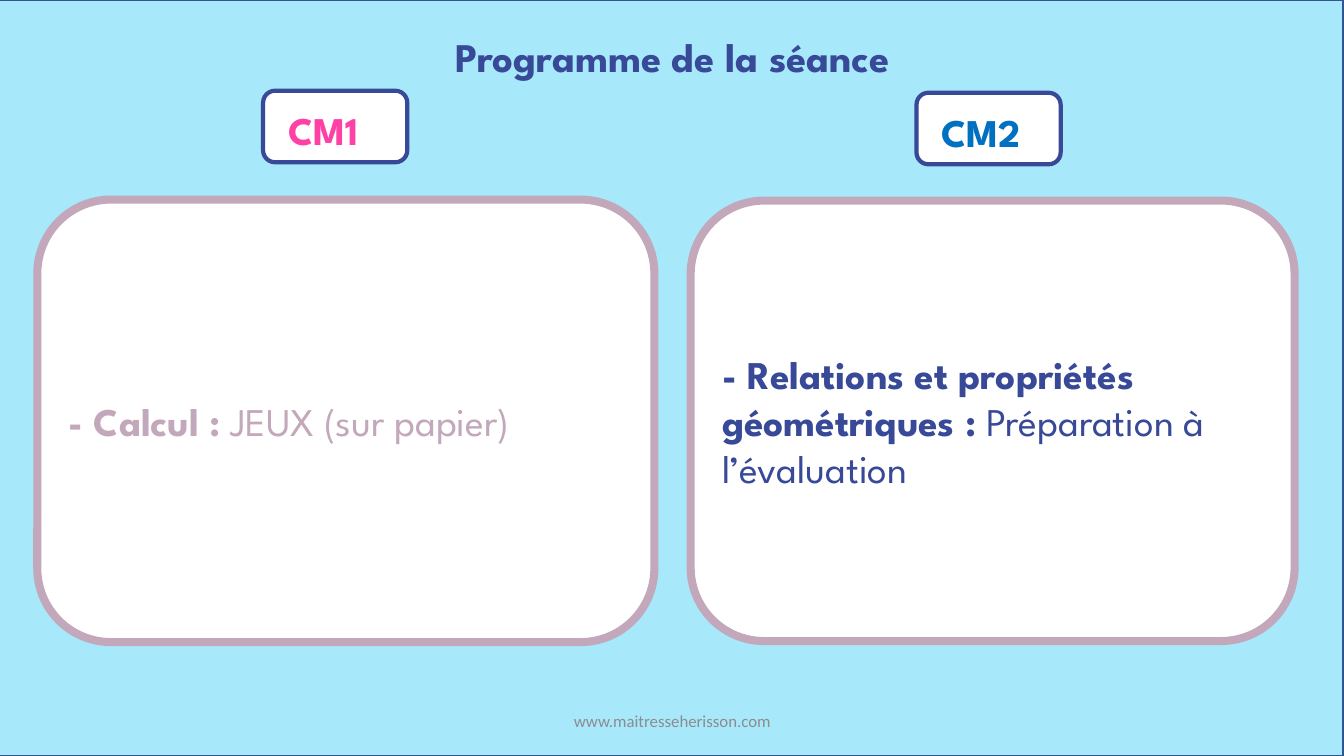
from pptx import Presentation
from pptx import util as u
from pptx.dml import color
from pptx.enum import shapes, text

RGB = color.RGBColor
SKY, EDGE, WHITE = RGB(0xA7, 0xE8, 0xFB), RGB(0x32, 0x54, 0x91), RGB(255, 255, 255)
NAVY, MAUVE = RGB(0x37, 0x49, 0x97), RGB(0xC3, 0xA7, 0xBA)
PINK, BLUE, GREY = RGB(0xFF, 0x41, 0xA5), RGB(0, 0x70, 0xC0), RGB(0x8C, 0x8C, 0x8C)
SPARTAN = "League Spartan"
RECT, ROUND = shapes.MSO_SHAPE.RECTANGLE, shapes.MSO_SHAPE.ROUNDED_RECTANGLE
TOP, MID = text.MSO_ANCHOR.TOP, text.MSO_ANCHOR.MIDDLE
LEFT, CENTER = text.PP_ALIGN.LEFT, text.PP_ALIGN.CENTER

TITLE = "Programme de la séance"
SITE = "www.maitresseherisson.com"
LEVELS = [
    {"name": "CM1", "hue": PINK, "tag": (2.61, 0.9), "card": (0.37, 1.98, 6.12, 4.39),
     "ink": MAUVE, "topic": "- Calcul : ", "task": "JEUX (sur papier)"},
    {"name": "CM2", "hue": BLUE, "tag": (9.09, 0.92), "card": (6.85, 1.99, 5.99, 4.37),
     "ink": NAVY, "topic": "- Relations et propriétés géométriques : ",
     "task": "Préparation à l’évaluation"},
]

deck = Presentation()
deck.slide_width, deck.slide_height = u.Inches(13.33), u.Inches(7.5)
slide = deck.slides.add_slide(deck.slide_layouts[6])


def draw(kind, area, fill, line, width):
    shape = slide.shapes.add_shape(kind, *map(u.Inches, area))
    shape.shadow.inherit = False
    shape.fill.solid()
    shape.fill.fore_color.rgb = fill
    shape.line.color.rgb = line
    shape.line.width = u.Pt(width)
    return shape


def write(shape, runs, ink, size=28, face=SPARTAN, align=LEFT, anchor=TOP):
    frame = shape.text_frame
    frame.word_wrap = True
    frame.vertical_anchor = anchor
    para = frame.paragraphs[0]
    para.alignment = align
    for words, bold in runs:
        run = para.add_run()
        run.text = words
        style = {"name": face, "size": u.Pt(size), "bold": bold}
        for key, value in style.items():
            setattr(run.font, key, value)
        run.font.color.rgb = ink


def label(area, *args, **style):
    write(slide.shapes.add_textbox(*map(u.Inches, area)), *args, **style)


draw(RECT, (-0.01, 0, 13.33, 7.5), SKY, EDGE, 1)
label((0.01, 0.27, 13.33, 0.59), [(TITLE, True)], NAVY, size=29, align=CENTER)
for level in LEVELS:
    left, top = level["tag"]
    draw(ROUND, (left, top, 1.43, 0.71), WHITE, NAVY, 3)
    label((left + 0.15, top + 0.11, 1.1, 0.57), [(level["name"], True)], level["hue"])
    card = draw(ROUND, level["card"], WHITE, MAUVE, 5.75)
    write(card, [(level["topic"], True), (level["task"], False)], level["ink"], anchor=MID)
label((4.42, 6.95, 4.5, 0.4), [(SITE, False)], GREY, size=12, face="Calibri",
      align=CENTER, anchor=MID)

deck.save("out.pptx")
